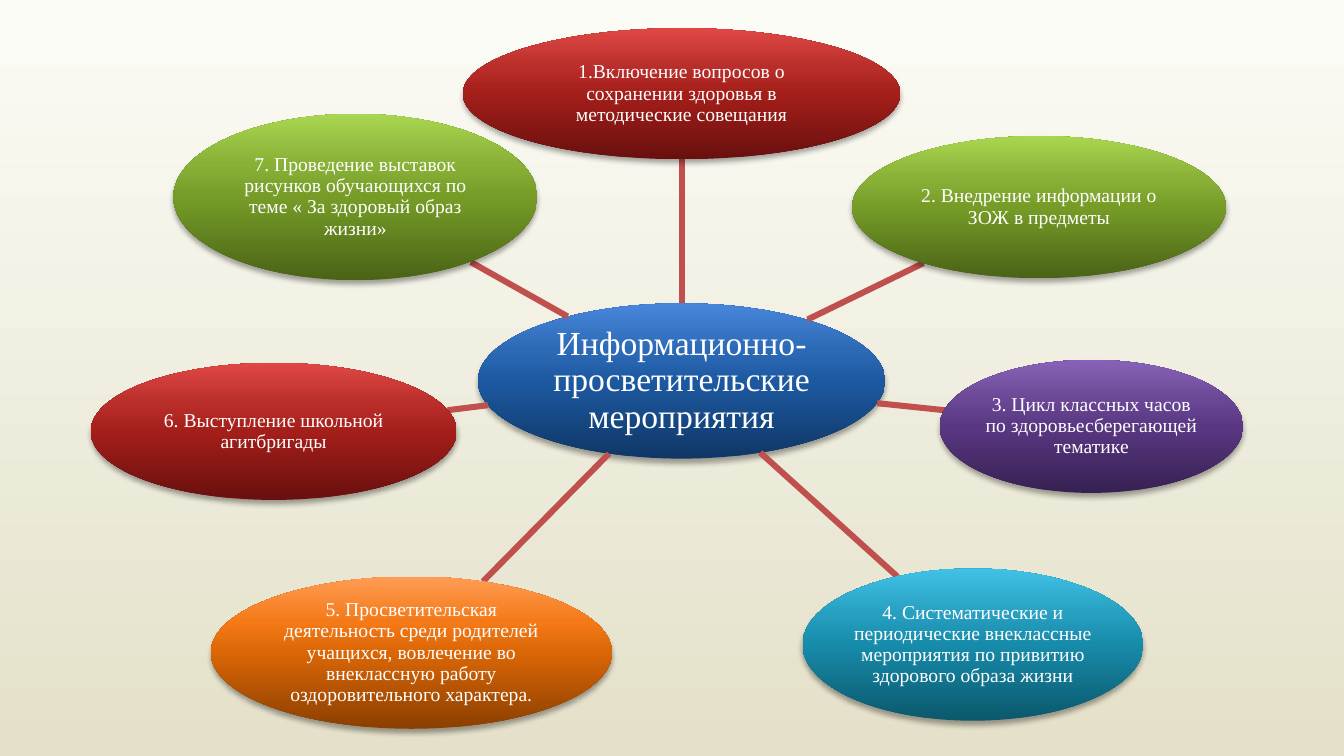
"""Slide: seven health education activities around a central topic."""
from copy import deepcopy

from pptx import Presentation
from pptx.dml.color import RGBColor
from pptx.enum.shapes import MSO_CONNECTOR, MSO_SHAPE
from pptx.enum.text import MSO_ANCHOR, PP_ALIGN
from pptx.oxml import parse_xml
from pptx.oxml.ns import nsdecls, qn
from pptx.util import Emu, Pt

PX = 9144
RED = ["68100E", "A41E1A", "B92E2A", "DF4845"]
GREEN = ["4A6316", "769C27", "89B137", "A9D651"]
BLUE = ["0F3766", "1D59A1", "2D6AB6", "4786DB"]
PURPLE = ["372152", "593782", "6A4895", "8763B7"]
TEAL = ["0B586C", "178BAA", "279FC0", "41C1E6"]
ORANGE = ["8B3F00", "DA6606", "F47917", "FF9C54"]
SHADOW = (
    f'<a:outerShdw {nsdecls("a")} blurRad="{Pt(4)}" dist="{Pt(3)}" dir="5400000" rotWithShape="0">'
    '<a:srgbClr val="000000"><a:alpha val="35000"/></a:srgbClr></a:outerShdw>'
)


def rgb(value):
    return RGBColor.from_string(value)


def add_oval(box, colors, text, size, inset):
    sp = slide.shapes.add_shape(MSO_SHAPE.OVAL, *[Emu(v * PX) for v in box])
    sp.line.fill.background()
    sp.fill.gradient()
    sp.fill.gradient_angle = 90
    stop_list = sp._element.spPr.find(qn("a:gradFill")).find(qn("a:gsLst"))
    for extra in [deepcopy(stop) for stop in stop_list]:
        stop_list.append(extra)
    for stop, position, color in zip(sp.fill.gradient_stops, [0, 0.5, 0.7, 1], colors):
        stop.position = position
        stop.color.rgb = rgb(color)
    sp.shadow.inherit = False
    sp._element.spPr.find(qn("a:effectLst")).append(parse_xml(SHADOW))

    tf = sp.text_frame
    tf.word_wrap = True
    tf.vertical_anchor = MSO_ANCHOR.MIDDLE
    tf.margin_left = tf.margin_right = tf.margin_top = tf.margin_bottom = Emu(inset * PX)
    p = tf.paragraphs[0]
    p.text = text
    p.alignment = PP_ALIGN.CENTER
    p.line_spacing = 0.9
    p.font.size = Pt(size)
    p.font.name = "Times New Roman"
    p.font.color.rgb = rgb("FFFFFF")


prs = Presentation()
prs.slide_width = Emu(1333 * PX)
prs.slide_height = Emu(750 * PX)
slide = prs.slides.add_slide(prs.slide_layouts[6])

background = slide.background.fill
background.gradient()
background.gradient_angle = 270
for stop, color in zip(background.gradient_stops, ["FBFCF6", "E4E0C9"]):
    stop.color.rgb = rgb(color)

add_oval((474, 301, 404, 154), BLUE, "Информационно-просветительские мероприятия", 24, 2)

activities = [
    ((676, 301, 676, 158), (459, 28, 434, 130), RED,
     "1.Включение вопросов о сохранении здоровья в методические совещания"),
    ((801, 317, 916, 261), (845, 135, 371, 141), GREEN,
     "2. Внедрение информации о ЗОЖ в предметы"),
    ((870, 400, 937, 407), (932, 357, 301, 132), PURPLE,
     "3. Цикл классных часов по здоровьесберегающей тематике"),
    ((754, 449, 890, 572), (796, 564, 338, 151), TEAL,
     "4. Систематические и периодические внеклассные мероприятия по привитию здорового образа жизни"),
    ((604, 450, 479, 577), (209, 572, 398, 151), ORANGE,
     "5. Просветительская деятельность среди родителей учащихся, вовлечение во внеклассную работу "
     "оздоровительного характера."),
    ((484, 402, 444, 407), (90, 360, 363, 136), RED,
     "6. Выступление школьной агитбригады"),
    ((563, 314, 467, 260), (172, 113, 361, 165), GREEN,
     "7. Проведение выставок рисунков обучающихся по теме « За здоровый образ жизни»"),
]
for ends, box, colors, text in activities:
    spoke = slide.shapes.add_connector(MSO_CONNECTOR.STRAIGHT, *[Emu(v * PX) for v in ends])
    spoke.line.color.rgb = rgb("C0504D")
    spoke.line.width = Pt(4.33)
    spoke._element.spPr.append(parse_xml(f'<a:effectLst {nsdecls("a")}/>'))
    add_oval(box, colors, text, 14, 1)

prs.save("out.pptx")
